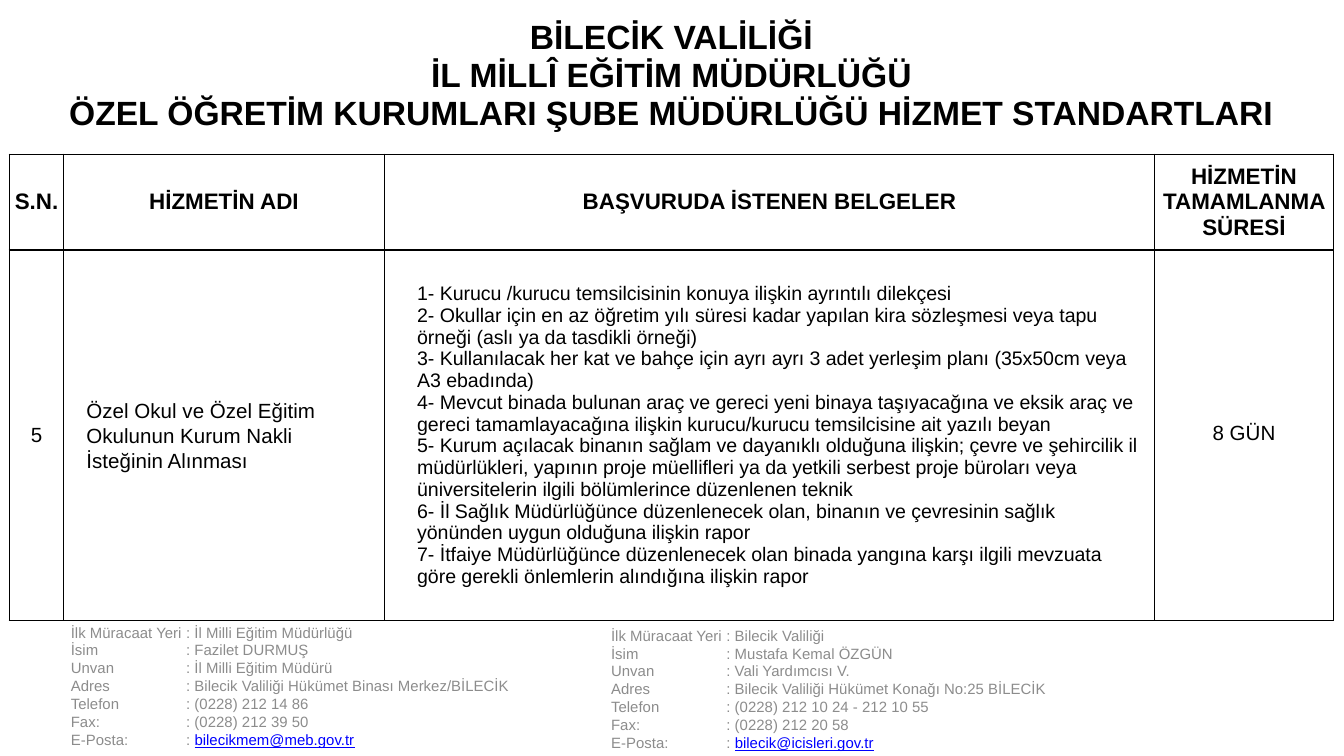
from pptx import Presentation
from pptx import util as u
from pptx.dml.color import RGBColor
from pptx.enum import text
from pptx.oxml import ns
from lxml import etree

BLACK = RGBColor(0x00, 0x00, 0x00)
GREY = RGBColor(0x8C, 0x8C, 0x8C)
BLUE = RGBColor(0x00, 0x00, 0xFF)
FONT = "Arial"
CENTER = text.PP_ALIGN.CENTER
LEFT = text.PP_ALIGN.LEFT

HEADING = [
    "BİLECİK VALİLİĞİ",
    "İL MİLLÎ EĞİTİM MÜDÜRLÜĞÜ",
    "ÖZEL ÖĞRETİM KURUMLARI ŞUBE MÜDÜRLÜĞÜ HİZMET STANDARTLARI",
]
COLUMNS = [
    ("S.N.", 1.02),
    ("HİZMETİN ADI", 6.07),
    ("BAŞVURUDA İSTENEN BELGELER", 14.55),
    ("HİZMETİN TAMAMLANMA SÜRESİ", 3.38),
]
ROW_HEIGHTS = [2.97, 1.8, 7.01]
DOCUMENTS = [
    "1- Kurucu /kurucu temsilcisinin konuya ilişkin ayrıntılı dilekçesi",
    "2- Okullar için en az öğretim yılı süresi kadar yapılan kira sözleşmesi veya tapu örneği (aslı ya da tasdikli örneği)",
    "3- Kullanılacak her kat ve bahçe için ayrı ayrı 3 adet yerleşim planı (35x50cm veya A3 ebadında)",
    "4- Mevcut binada bulunan araç ve gereci yeni binaya taşıyacağına ve eksik araç ve gereci tamamlayacağına ilişkin kurucu/kurucu temsilcisine ait yazılı beyan",
    "5- Kurum açılacak binanın sağlam ve dayanıklı olduğuna ilişkin; çevre ve şehircilik il müdürlükleri, yapının proje müellifleri ya da yetkili serbest proje büroları veya üniversitelerin ilgili bölümlerince düzenlenen teknik",
    "6- İl Sağlık Müdürlüğünce düzenlenecek olan, binanın ve çevresinin sağlık yönünden uygun olduğuna ilişkin rapor",
    "7- İtfaiye Müdürlüğünce düzenlenecek olan binada yangına karşı ilgili mevzuata göre gerekli önlemlerin alındığına ilişkin rapor",
]
LABELS = ["İlk Müracaat Yeri", "İsim", "Unvan", "Adres", "Telefon", "Fax:", "E-Posta:"]
CONTACTS = [
    (1.09, 11.73, [
        "İl Milli Eğitim Müdürlüğü", "Fazilet DURMUŞ", "İl Milli Eğitim Müdürü",
        "Bilecik Valiliği Hükümet Binası Merkez/BİLECİK",
        "(0228) 212 14 86", "(0228) 212 39 50", "bilecikmem@meb.gov.tr"]),
    (11.3, 11.79, [
        "Bilecik Valiliği", "Mustafa Kemal ÖZGÜN", "Vali Yardımcısı V.",
        "Bilecik Valiliği Hükümet Konağı No:25 BİLECİK",
        "(0228) 212 10 24 - 212 10 55", "(0228) 212 20 58", "bilecik@icisleri.gov.tr"]),
]


class StandardsSlide:
    def __init__(self, slide):
        self.slide = slide

    def style(self, run, size, color=BLACK, bold=False):
        run.font.name = FONT
        run.font.size = u.Pt(size)
        run.font.color.rgb = color
        run.font.bold = bold

    def table(self, left, top, widths, heights):
        frame = self.slide.shapes.add_table(
            len(heights), len(widths), u.Cm(left), u.Cm(top),
            u.Cm(sum(widths)), u.Cm(sum(heights)))
        grid = frame.table
        grid.first_row = grid.horz_banding = False
        for column, width in zip(grid.columns, widths):
            column.width = u.Cm(width)
        for row, height in zip(grid.rows, heights):
            row.height = u.Cm(height)
        for index, row in enumerate(grid.rows):
            for cell in row.cells:
                self.borders(cell, "B" if index == 0 else "LRTB")
                cell.fill.background()
        return grid

    def borders(self, cell, visible):
        properties = cell._tc.get_or_add_tcPr()
        for side in "LRTB":
            line = etree.SubElement(properties, ns.qn(f"a:ln{side}"), w=str(u.Pt(1)))
            if side in visible:
                fill = etree.SubElement(line, ns.qn("a:solidFill"))
                etree.SubElement(fill, ns.qn("a:srgbClr"), val=str(BLACK))
            else:
                etree.SubElement(line, ns.qn("a:noFill"))

    def cell(self, cell, lines, size, bold=False, align=CENTER, indent=0,
             spacing=None, padded=False):
        cell.vertical_anchor = text.MSO_ANCHOR.MIDDLE
        if not padded:
            cell.margin_left = cell.margin_right = 0
            cell.margin_top = cell.margin_bottom = 0
        cell.text_frame.text = "\n".join(lines)
        for paragraph in cell.text_frame.paragraphs:
            paragraph.alignment = align
            paragraph.line_spacing = spacing
            if indent:
                properties = paragraph._p.get_or_add_pPr()
                properties.set("marL", str(u.Cm(indent)))
                properties.set("indent", "0")
            for run in paragraph.runs:
                self.style(run, size, bold=bold)

    def contact(self, left, top, values):
        box = self.slide.shapes.add_textbox(u.Cm(left), u.Cm(top), u.Cm(11.99), u.Cm(2.54))
        frame = box.text_frame
        frame.word_wrap = True
        frame.vertical_anchor = text.MSO_ANCHOR.BOTTOM
        frame.text = "\n".join(f"{label}\t: " for label in LABELS)
        for paragraph, value in zip(frame.paragraphs, values):
            tabs = etree.SubElement(paragraph._p.get_or_add_pPr(), ns.qn("a:tabLst"))
            etree.SubElement(tabs, ns.qn("a:tab"), pos=str(u.Cm(2.18)), algn="l")
            is_mail = "@" in value
            detail = paragraph.add_run()
            detail.text = value
            for run in paragraph.runs:
                self.style(run, 8, GREY)
            if is_mail:
                detail.font.color.rgb = BLUE
                detail.font.underline = True


def main():
    deck = Presentation()
    deck.slide_width, deck.slide_height = u.Cm(25.4), u.Cm(14.29)
    page = StandardsSlide(deck.slides.add_slide(deck.slide_layouts[6]))

    for left, top, values in CONTACTS:
        page.contact(left, top, values)

    grid = page.table(0.18, -0.05, [width for _, width in COLUMNS], ROW_HEIGHTS)
    grid.cell(0, 0).merge(grid.cell(0, len(COLUMNS) - 1))
    page.cell(grid.cell(0, 0), HEADING, 18, bold=True)
    for index, (header, _) in enumerate(COLUMNS):
        page.cell(grid.cell(1, index), [header], 12, bold=True)

    page.cell(grid.cell(2, 0), ["5"], 11)
    page.cell(grid.cell(2, 1), ["Özel Okul ve Özel Eğitim Okulunun Kurum Nakli İsteğinin Alınması"],
              11, align=LEFT, indent=0.18, spacing=1.1, padded=True)
    page.cell(grid.cell(2, 2), DOCUMENTS, 10.5, align=LEFT, indent=0.36, padded=True)
    page.cell(grid.cell(2, 3), ["8 GÜN"], 11, spacing=u.Pt(10), padded=True)

    deck.save("out.pptx")


if __name__ == "__main__":
    main()
